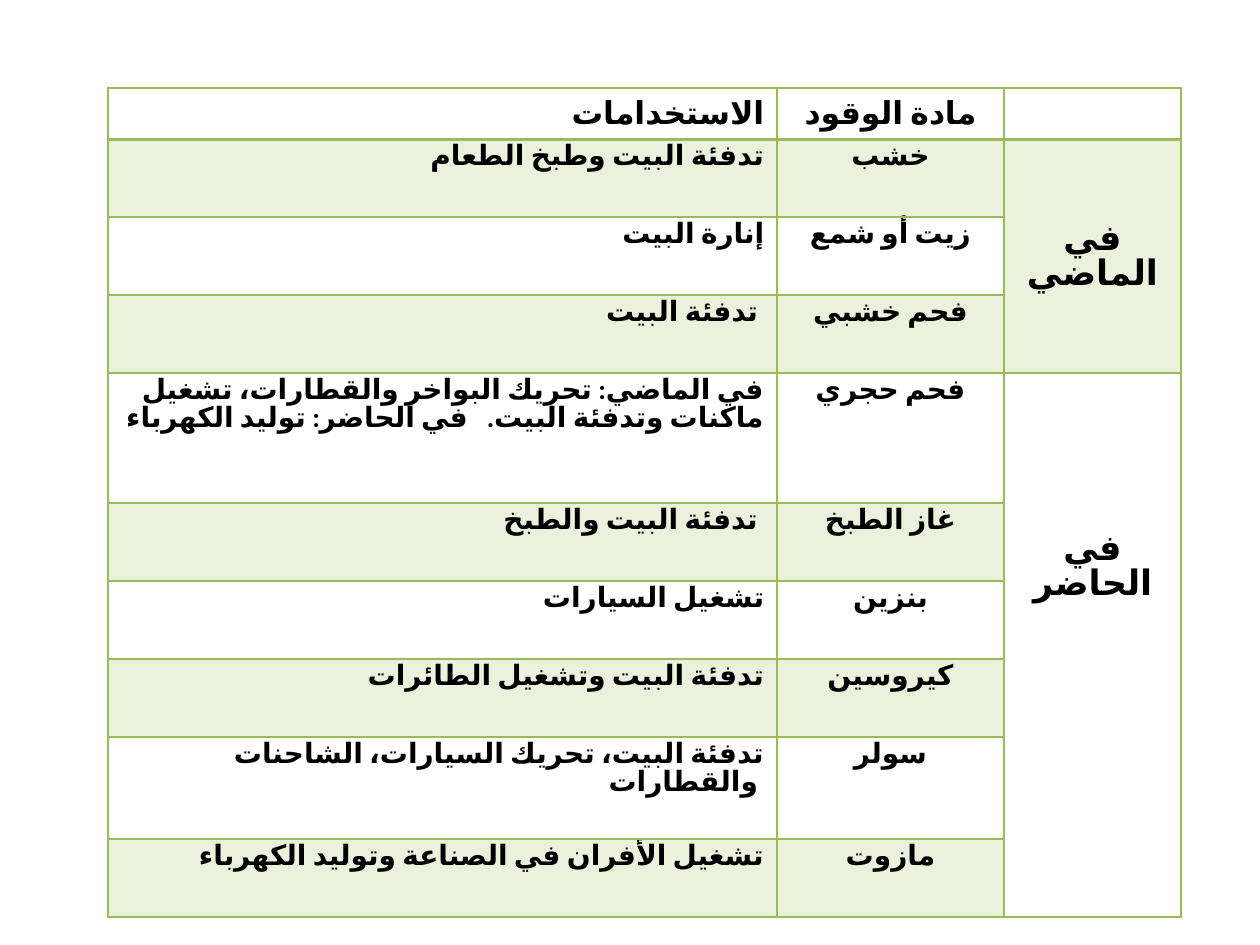
from lxml import etree
from pptx import Presentation
from pptx import util as u
from pptx.dml.color import RGBColor
from pptx.enum import lang, text
from pptx.oxml.ns import qn

PX = u.Inches(1) / 126
GREEN = RGBColor(0x9B, 0xBB, 0x59)
BLACK = RGBColor(0, 0, 0)
FONT = "Calibri"
NO_STYLE = "{2D5ABB26-0587-4C30-8999-92F81FD0307C}"
RIGHT, CENTER = text.PP_ALIGN.RIGHT, text.PP_ALIGN.CENTER

HEADER = ("الاستخدامات", "مادة الوقود")
FUELS = [
    ("تدفئة البيت وطبخ الطعام", "خشب"),
    ("إنارة البيت", "زيت أو شمع"),
    ("تدفئة البيت ", "فحم خشبي"),
    ("في الماضي: تحريك البواخر والقطارات، تشغيل ماكنات وتدفئة البيت.   في الحاضر: توليد الكهرباء",
     "فحم حجري"),
    ("تدفئة البيت والطبخ ", "غاز الطبخ"),
    ("تشغيل السيارات", "بنزين"),
    ("تدفئة البيت وتشغيل الطائرات", "كيروسين"),
    ("تدفئة البيت، تحريك السيارات، الشاحنات والقطارات ", "سولر"),
    ("تشغيل الأفران في الصناعة وتوليد الكهرباء", "مازوت"),
]
# first row, last row, label, space above the label
PERIODS = [(1, 3, "في الماضي", 86), (4, 9, "في الحاضر", 162)]
COLUMNS = [669, 227, 177]
ROWS = [51, 78, 78, 78, 130, 78, 78, 78, 102, 78]


def px(count):
    return u.Emu(round(count * PX))


def write(cell, words, size, align, spacing):
    para = cell.text_frame.paragraphs[0]
    para.alignment = align
    para.line_spacing = spacing
    span = para.add_run()
    span.text = words
    looks = {"name": FONT, "size": u.Pt(size), "bold": True,
             "language_id": lang.MSO_LANGUAGE_ID.ARABIC}
    for name, value in looks.items():
        setattr(span.font, name, value)
    span.font.color.rgb = BLACK
    # Arabic letters take the complex-script font
    etree.SubElement(span._r.get_or_add_rPr(), qn("a:cs"), typeface=FONT)


deck = Presentation()
deck.slide_width, deck.slide_height = px(1260), px(945)
page = deck.slides.add_slide(deck.slide_layouts[6])

frame = page.shapes.add_table(len(ROWS), len(COLUMNS), px(108), px(88),
                              px(sum(COLUMNS)), px(sum(ROWS)))
table = frame.table
table.first_row = table.horz_banding = False
table._tbl.tblPr.find(qn("a:tableStyleId")).text = NO_STYLE
for column, width in zip(table.columns, COLUMNS):
    column.width = px(width)
for row, height in zip(table.rows, ROWS):
    row.height = px(height)

# Borders and banding; a period cell takes the shade of its first row
period_starts = {row: first for first, last, *_ in PERIODS for row in range(first, last + 1)}
for r in range(len(ROWS)):
    for c in range(len(COLUMNS)):
        cell = table.cell(r, c)
        props = cell._tc.get_or_add_tcPr()
        for side in ("lnL", "lnR", "lnT", "lnB"):
            heavy = (r, side) in ((0, "lnB"), (1, "lnT"))
            line = etree.SubElement(props, qn(f"a:{side}"), w=str(u.Pt(2 if heavy else 1)))
            solid = etree.SubElement(line, qn("a:solidFill"))
            etree.SubElement(solid, qn("a:srgbClr"), val=str(GREEN))
        band = period_starts.get(r, r) if c == 2 else r
        if band % 2:
            cell.fill.solid()
            cell.fill.fore_color.rgb = GREEN
            color = props.find(f"{qn('a:solidFill')}/{qn('a:srgbClr')}")
            etree.SubElement(color, qn("a:alpha"), val="20000")
        else:
            cell.fill.background()

for r, words in enumerate([HEADER] + FUELS):
    size, spacing = (18, 1.0) if r == 0 else (16, u.Pt(16))
    for c, align in enumerate((RIGHT, CENTER)):
        write(table.cell(r, c), words[c], size, align, spacing)

for first, last, label, gap in PERIODS:
    cell = table.cell(first, 2)
    cell.merge(table.cell(last, 2))
    cell.margin_top = px(gap)
    write(cell, label, 20, CENTER, u.Pt(20))

deck.save("out.pptx")
